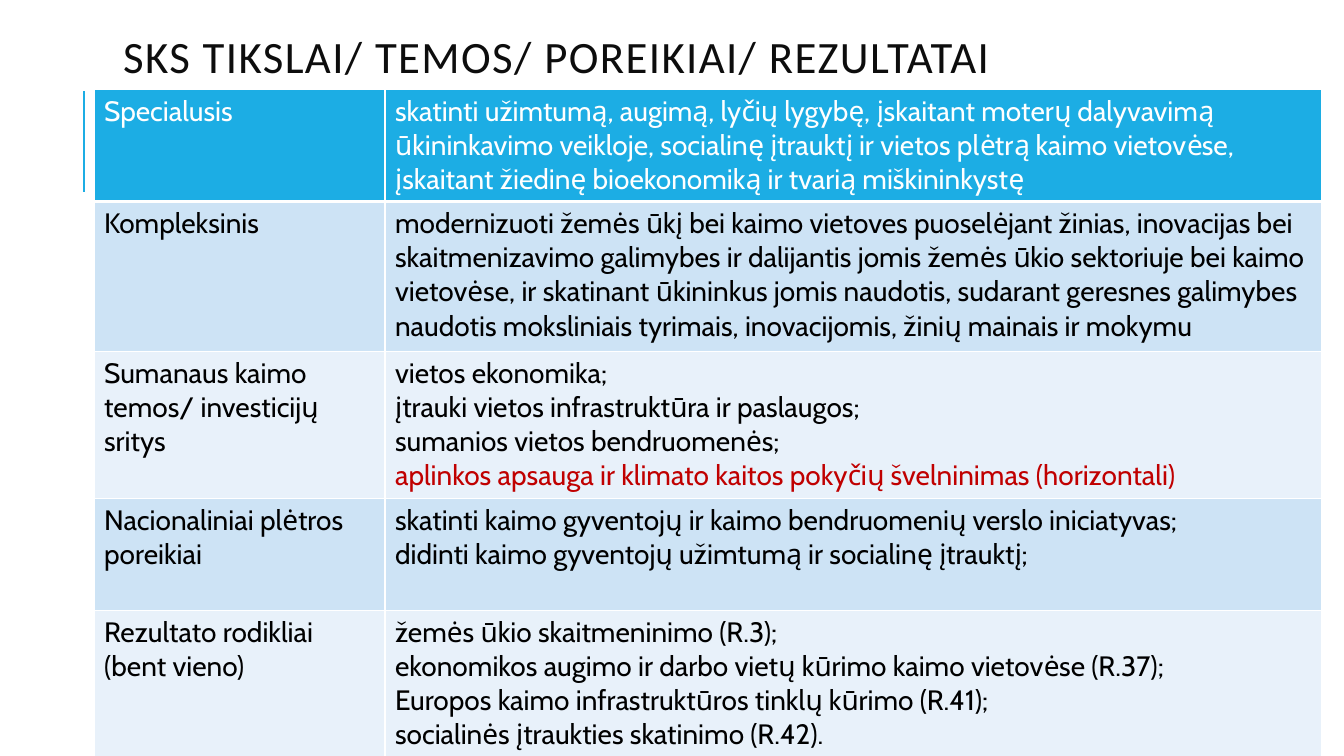
from lxml.etree import SubElement as Sub
from pptx import Presentation
from pptx.dml.color import RGBColor as Rgb
from pptx.enum.shapes import MSO_CONNECTOR as Conn
from pptx.enum.text import MSO_ANCHOR as Anchor, MSO_AUTO_SIZE as Auto, PP_ALIGN as Align
from pptx.oxml.ns import qn
from pptx.util import Pt

SCALE = 914400 / 100.8  # EMU in one px
COLORS = {
    "head": "1CADE4", "odd": "CDE3F5", "even": "E8F1FA",
    "white": "FFFFFF", "black": "000000", "title": "0D0D0D", "red": "C00000",
}
TITLE = "SKS TIKSLAI/ TEMOS/ POREIKIAI/ REZULTATAI"
COLS = [291, 937]
# Each row: height, label, paragraphs
ROWS = [
    (112, "Specialusis", [
        "skatinti užimtumą, augimą, lyčių lygybę, įskaitant moterų dalyvavimą "
        "ūkininkavimo veikloje, socialinę įtrauktį ir vietos plėtrą kaimo vietovėse, "
        "įskaitant žiedinę bioekonomiką ir tvarią miškininkystę"]),
    (150, "Kompleksinis", [
        "modernizuoti žemės ūkį bei kaimo vietoves puoselėjant žinias, inovacijas bei "
        "skaitmenizavimo galimybes ir dalijantis jomis žemės ūkio sektoriuje bei kaimo "
        "vietovėse, ir skatinant ūkininkus jomis naudotis, sudarant geresnes galimybes "
        "naudotis moksliniais tyrimais, inovacijomis, žinių mainais ir mokymu"]),
    (147, "Sumanaus kaimo temos/ investicijų sritys", [
        "vietos ekonomika;",
        "įtrauki vietos infrastruktūra ir paslaugos;",
        "sumanios vietos bendruomenės;",
        "aplinkos apsauga ir klimato kaitos pokyčių švelninimas (horizontali)"]),
    (112, "Nacionaliniai plėtros poreikiai", [
        "skatinti kaimo gyventojų ir kaimo bendruomenių verslo iniciatyvas;",
        "didinti kaimo gyventojų užimtumą ir socialinę įtrauktį;"]),
    (147, "Rezultato rodikliai (bent vieno)", [
        "žemės ūkio skaitmeninimo (R.3);",
        "ekonomikos augimo ir darbo vietų kūrimo kaimo vietovėse (R.37);",
        "Europos kaimo infrastruktūros tinklų kūrimo (R.41);",
        "socialinės įtraukties skatinimo (R.42)."]),
]
RED = (2, 3)  # row and paragraph of the horizontal theme


def px(num):
    return round(num * SCALE)


def tint(name):
    return Rgb.from_string(COLORS[name])


def apply(item, form):
    for key, val in form.items():
        setattr(item, key, val)


def write(par, text, face, size, color):
    run = par.add_run()
    run.text = text
    apply(run.font, {"name": face, "size": Pt(size)})
    run.font.color.rgb = tint(color)
    return run


def add_title(slide):
    box = slide.shapes.title
    apply(box, {"left": px(113), "top": px(9), "width": px(1190), "height": px(103)})
    apply(box.text_frame, {"auto_size": Auto.NONE, "word_wrap": True,
                           "vertical_anchor": Anchor.MIDDLE})
    par = box.text_frame.paragraphs[0]
    apply(par, {"alignment": Align.LEFT, "line_spacing": 0.8})
    run = write(par, TITLE, "Calibri", 32, "title")
    run.font._element.set("spc", "100")


def add_rule(slide):
    rule = slide.shapes.add_connector(Conn.STRAIGHT, px(84), px(192), px(84), px(91))
    rule.line.color.rgb = tint("head")
    rule.line.width = Pt(1.5)
    Sub(rule._element.spPr, qn("a:effectLst"))


def add_edges(cell, row):
    props = cell._tc.get_or_add_tcPr()
    wide = {(0, "B"), (1, "T")}  # heavy line under the header
    for side in "LRTB":
        width = Pt(3 if (row, side) in wide else 1)
        line = Sub(props, qn("a:ln" + side), w=str(width))
        fill = Sub(line, qn("a:solidFill"))
        Sub(fill, qn("a:srgbClr"), val=COLORS["white"])


def fill_cell(cell, row, lines, red=None):
    add_edges(cell, row)
    cell.fill.solid()
    cell.fill.fore_color.rgb = tint("head" if row == 0 else "odd" if row % 2 else "even")
    base = "black" if row else "white"
    frame = cell.text_frame
    for num, text in enumerate(lines):
        par = frame.add_paragraph() if num else frame.paragraphs[0]
        write(par, text, "Cabin", 20, "red" if num == red else base)


def add_grid(slide):
    high = sum(row[0] for row in ROWS)
    grid = slide.shapes.add_table(len(ROWS), len(COLS), px(94), px(89),
                                  px(sum(COLS)), px(high)).table
    for col, wide in zip(grid.columns, COLS):
        col.width = px(wide)
    for row, (high, label, lines) in enumerate(ROWS):
        grid.rows[row].height = px(high)
        fill_cell(grid.cell(row, 0), row, [label])
        fill_cell(grid.cell(row, 1), row, lines, RED[1] if row == RED[0] else None)


def main():
    deck = Presentation()
    apply(deck, {"slide_width": px(1344), "slide_height": px(756)})
    slide = deck.slides.add_slide(deck.slide_layouts[5])  # title only
    add_rule(slide)
    add_title(slide)
    add_grid(slide)
    deck.save("out.pptx")


if __name__ == "__main__":
    main()
